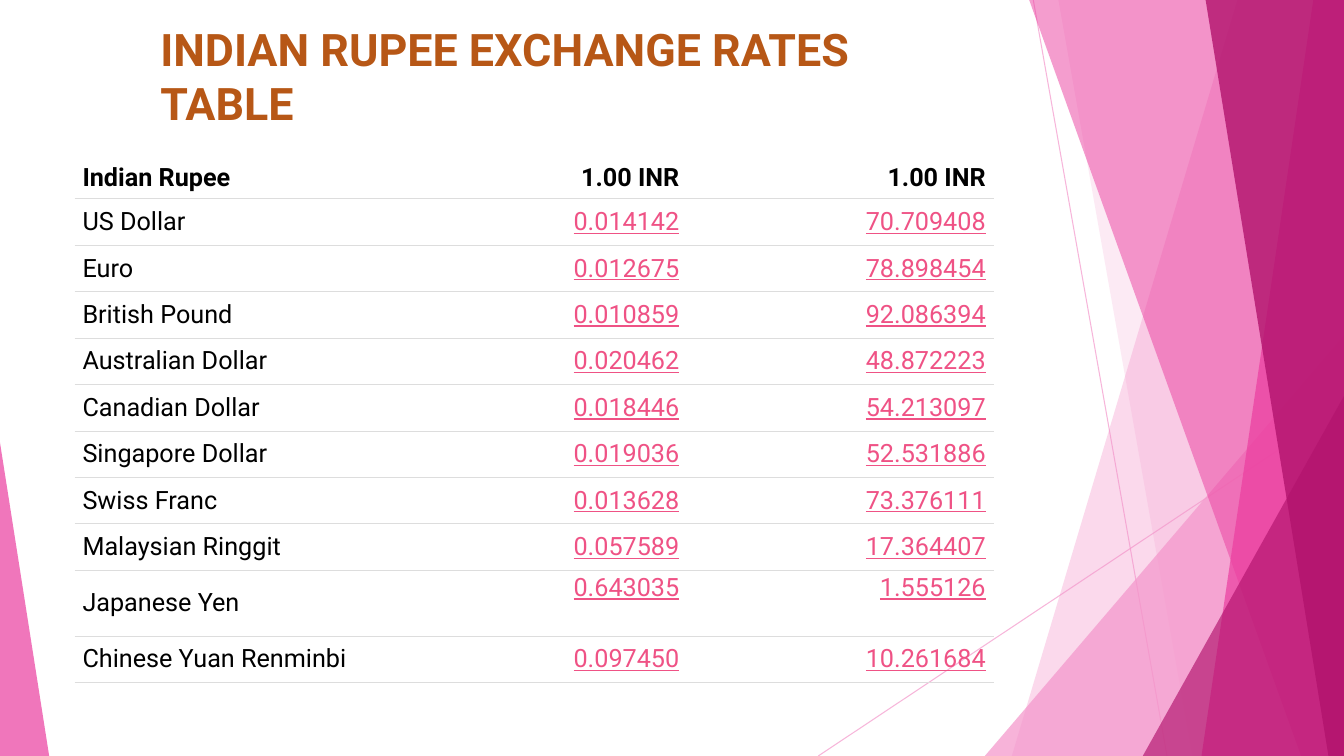
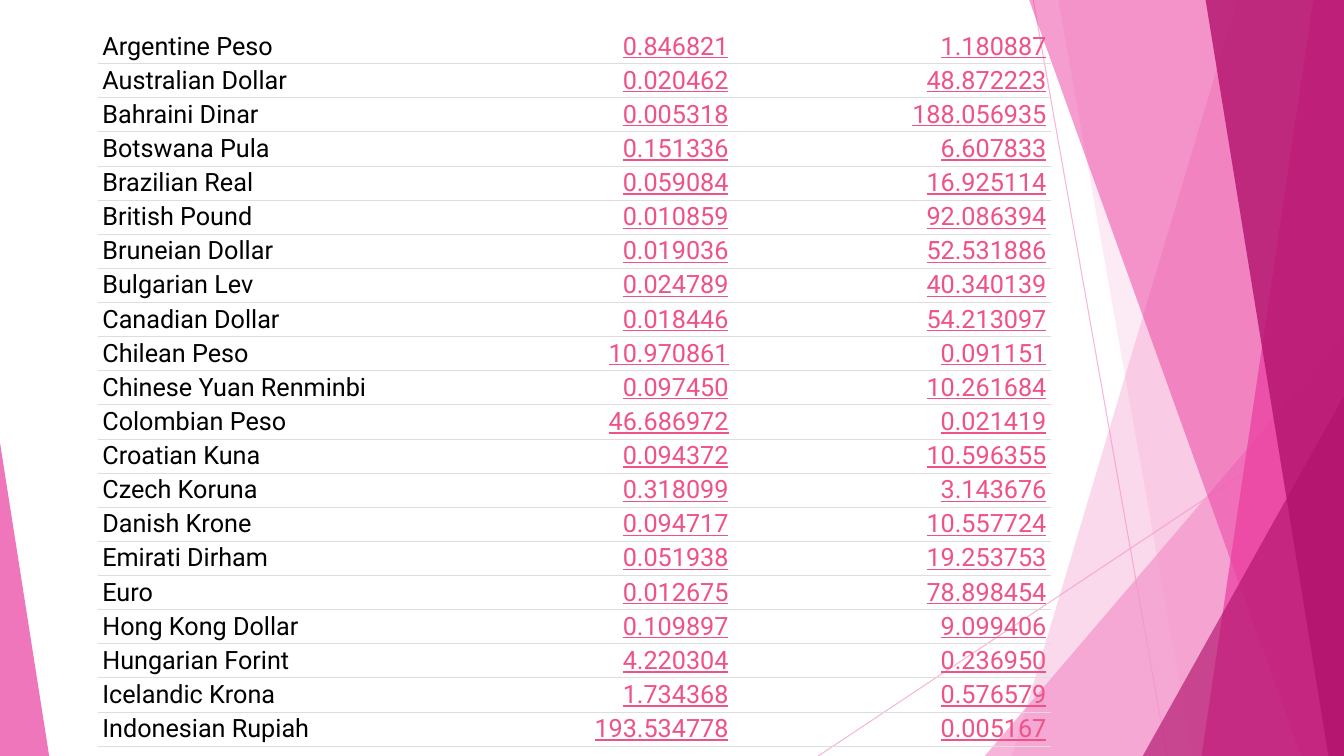
from dataclasses import dataclass
from typing import Optional, Union

from lxml import etree
from pptx import Presentation
from pptx.dml.color import RGBColor
from pptx.enum import shapes, text
from pptx.oxml.ns import qn
from pptx.util import Cm, Pt

# Shared look
FONT = "Roboto"
BLACK = RGBColor(0x00, 0x00, 0x00)
TITLE = RGBColor(0xB7, 0x57, 0x16)
RATE = RGBColor(0xEF, 0x52, 0x85)
RULE = RGBColor(0xDD, 0xDD, 0xDD)
LIGHT = RGBColor(0xF4, 0x96, 0xCB)
PINK = RGBColor(0xEB, 0x3D, 0x9F)
DARK = RGBColor(0xB2, 0x13, 0x6D)
WIDTH, HEIGHT = 33.87, 19.05


@dataclass
class Ray:
    start: tuple[float, float]
    end: tuple[float, float]


@dataclass
class Band:
    """Slanted left edge, running to the right side of the slide."""
    top_x: float
    bottom_x: float
    color: RGBColor
    opacity: int


@dataclass
class Wedge:
    """Right-angled triangle standing on the bottom of the slide."""
    left: float
    top: float
    width: float
    apex: int
    color: RGBColor
    opacity: int


@dataclass
class RateTable:
    left: float
    top: float
    col_width: float
    row_height: float
    inset_x: float
    inset_y: float
    rows: list[tuple[str, str, str]]
    header_height: Optional[float] = None
    tall_row: Optional[int] = None
    tall_height: float = 0


RAYS = [Ray((26.04, 0), (29.41, HEIGHT)), Ray((WIDTH, 10.24), (20.62, HEIGHT))]
FACETS: list[Union[Band, Wedge]] = [
    Band(31.19, 25.5, LIGHT, 36),
    Band(26.67, 30.05, LIGHT, 20),
    Wedge(24.82, 8.46, 9.05, 1, LIGHT, 72),
    Band(25.93, 32.79, PINK, 50),
    Band(33.1, 30.28, PINK, 70),
    Band(30.38, 33.48, DARK, 80),
    Wedge(28.8, 9.98, 5.07, 1, DARK, 66),
    Wedge(0, 11.15, 1.24, 0, PINK, 70),
]

MAIN_RATES = RateTable(
    1.88, 3.94, 7.72, 1.17, 0.2, 0.07,
    header_height=1.07, tall_row=9, tall_height=1.66,
    rows=[
        ("Indian Rupee", "1.00 INR", "1.00 INR"),
        ("US Dollar", "0.014142", "70.709408"),
        ("Euro", "0.012675", "78.898454"),
        ("British Pound", "0.010859", "92.086394"),
        ("Australian Dollar", "0.020462", "48.872223"),
        ("Canadian Dollar", "0.018446", "54.213097"),
        ("Singapore Dollar", "0.019036", "52.531886"),
        ("Swiss Franc", "0.013628", "73.376111"),
        ("Malaysian Ringgit", "0.057589", "17.364407"),
        ("Japanese Yen", "0.643035", "1.555126"),
        ("Chinese Yuan Renminbi", "0.097450", "10.261684"),
    ])
WORLD_RATES = RateTable(
    2.46, 0.74, 8.01, 0.86, 0.12, 0.05,
    rows=[
        ("Argentine Peso", "0.846821", "1.180887"),
        ("Australian Dollar", "0.020462", "48.872223"),
        ("Bahraini Dinar", "0.005318", "188.056935"),
        ("Botswana Pula", "0.151336", "6.607833"),
        ("Brazilian Real", "0.059084", "16.925114"),
        ("British Pound", "0.010859", "92.086394"),
        ("Bruneian Dollar", "0.019036", "52.531886"),
        ("Bulgarian Lev", "0.024789", "40.340139"),
        ("Canadian Dollar", "0.018446", "54.213097"),
        ("Chilean Peso", "10.970861", "0.091151"),
        ("Chinese Yuan Renminbi", "0.097450", "10.261684"),
        ("Colombian Peso", "46.686972", "0.021419"),
        ("Croatian Kuna", "0.094372", "10.596355"),
        ("Czech Koruna", "0.318099", "3.143676"),
        ("Danish Krone", "0.094717", "10.557724"),
        ("Emirati Dirham", "0.051938", "19.253753"),
        ("Euro", "0.012675", "78.898454"),
        ("Hong Kong Dollar", "0.109897", "9.099406"),
        ("Hungarian Forint", "4.220304", "0.236950"),
        ("Icelandic Krona", "1.734368", "0.576579"),
        ("Indonesian Rupiah", "193.534778", "0.005167"),
    ])


def set_opacity(sp, percent: int) -> None:
    for clr in sp._element.spPr.iter(qn("a:srgbClr")):
        etree.SubElement(clr, qn("a:alpha"), val=str(percent * 1000))


def add_run(p, words: str, size: int, color: RGBColor, bold: bool = False,
            underline: bool = False) -> None:
    r = p.add_run()
    r.text = words
    r.font.name, r.font.size = FONT, Pt(size)
    r.font.bold, r.font.underline = bold, underline
    r.font.color.rgb = color


# Background
def draw_ray(slide, ray: Ray) -> None:
    line = slide.shapes.add_connector(
        shapes.MSO_CONNECTOR.STRAIGHT,
        *(Cm(v) for v in ray.start + ray.end))
    line.line.color.rgb = LIGHT
    line.line.width = Pt(0.75)
    etree.SubElement(line._element.spPr, qn("a:effectLst"))
    set_opacity(line, 70)


def draw_facet(slide, facet: Union[Band, Wedge]) -> None:
    if isinstance(facet, Band):
        outline = slide.shapes.build_freeform(Cm(facet.top_x), Cm(-0.02))
        outline.add_line_segments([
            (Cm(WIDTH), Cm(-0.02)), (Cm(WIDTH), Cm(HEIGHT)),
            (Cm(facet.bottom_x), Cm(HEIGHT))])
        sp = outline.convert_to_shape()
    else:
        sp = slide.shapes.add_shape(
            shapes.MSO_SHAPE.ISOSCELES_TRIANGLE, Cm(facet.left), Cm(facet.top),
            Cm(facet.width), Cm(HEIGHT - facet.top))
        sp.adjustments[0] = facet.apex
    sp.shadow.inherit = False
    sp.fill.solid()
    sp.fill.fore_color.rgb = facet.color
    sp.line.fill.background()
    set_opacity(sp, facet.opacity)


def add_slide(prs):
    slide = prs.slides.add_slide(prs.slide_layouts[6])
    for ray in RAYS:
        draw_ray(slide, ray)
    for facet in FACETS:
        draw_facet(slide, facet)
    return slide


# Content
def add_title(slide, words: str) -> None:
    box = slide.shapes.add_textbox(Cm(4.04), Cm(0.56), Cm(20.5), Cm(2.72))
    tf = box.text_frame
    tf.word_wrap = True
    tf.margin_left = tf.margin_right = tf.margin_top = tf.margin_bottom = 0
    add_run(tf.paragraphs[0], words, 32, TITLE, bold=True)


def rule_cell(cell, has_top: bool) -> None:
    tc_pr = cell._tc.get_or_add_tcPr()
    for tag, visible in (("lnL", False), ("lnR", False),
                         ("lnT", has_top), ("lnB", True)):
        ln = etree.SubElement(tc_pr, qn(f"a:{tag}"), w=str(Pt(0.6)))
        if visible:
            fill = etree.SubElement(ln, qn("a:solidFill"))
            etree.SubElement(fill, qn("a:srgbClr"), val=str(RULE))
        else:
            etree.SubElement(ln, qn("a:noFill"))
    cell.fill.background()


def add_rates(slide, rates: RateTable) -> None:
    heights = [rates.row_height] * len(rates.rows)
    if rates.header_height:
        heights[0] = rates.header_height
    if rates.tall_row:
        heights[rates.tall_row] = rates.tall_height
    table = slide.shapes.add_table(
        len(rates.rows), 3, Cm(rates.left), Cm(rates.top),
        Cm(3 * rates.col_width), Cm(sum(heights))).table
    table.first_row = table.horz_banding = False
    for col in table.columns:
        col.width = Cm(rates.col_width)
    for i, values in enumerate(rates.rows):
        table.rows[i].height = Cm(heights[i])
        header = i == 0 and rates.header_height is not None
        for j, value in enumerate(values):
            cell = table.cell(i, j)
            rule_cell(cell, has_top=i > 0)
            cell.margin_left = cell.margin_right = Cm(rates.inset_x)
            cell.margin_top = cell.margin_bottom = Cm(rates.inset_y)
            raised = j > 0 and i == rates.tall_row
            cell.vertical_anchor = (text.MSO_ANCHOR.TOP if raised
                                    else text.MSO_ANCHOR.MIDDLE)
            p = cell.text_frame.paragraphs[0]
            p.alignment = text.PP_ALIGN.RIGHT if j else text.PP_ALIGN.LEFT
            is_rate = j > 0 and not header
            add_run(p, value, 18, RATE if is_rate else BLACK,
                    bold=header, underline=is_rate)


def main() -> None:
    prs = Presentation()
    prs.slide_width, prs.slide_height = Cm(WIDTH), Cm(HEIGHT)

    # Slide 1: main currencies
    slide = add_slide(prs)
    add_rates(slide, MAIN_RATES)
    add_title(slide, "INDIAN RUPEE EXCHANGE RATES TABLE")

    # Slide 2: world currencies
    add_rates(add_slide(prs), WORLD_RATES)

    prs.save("out.pptx")


if __name__ == "__main__":
    main()
